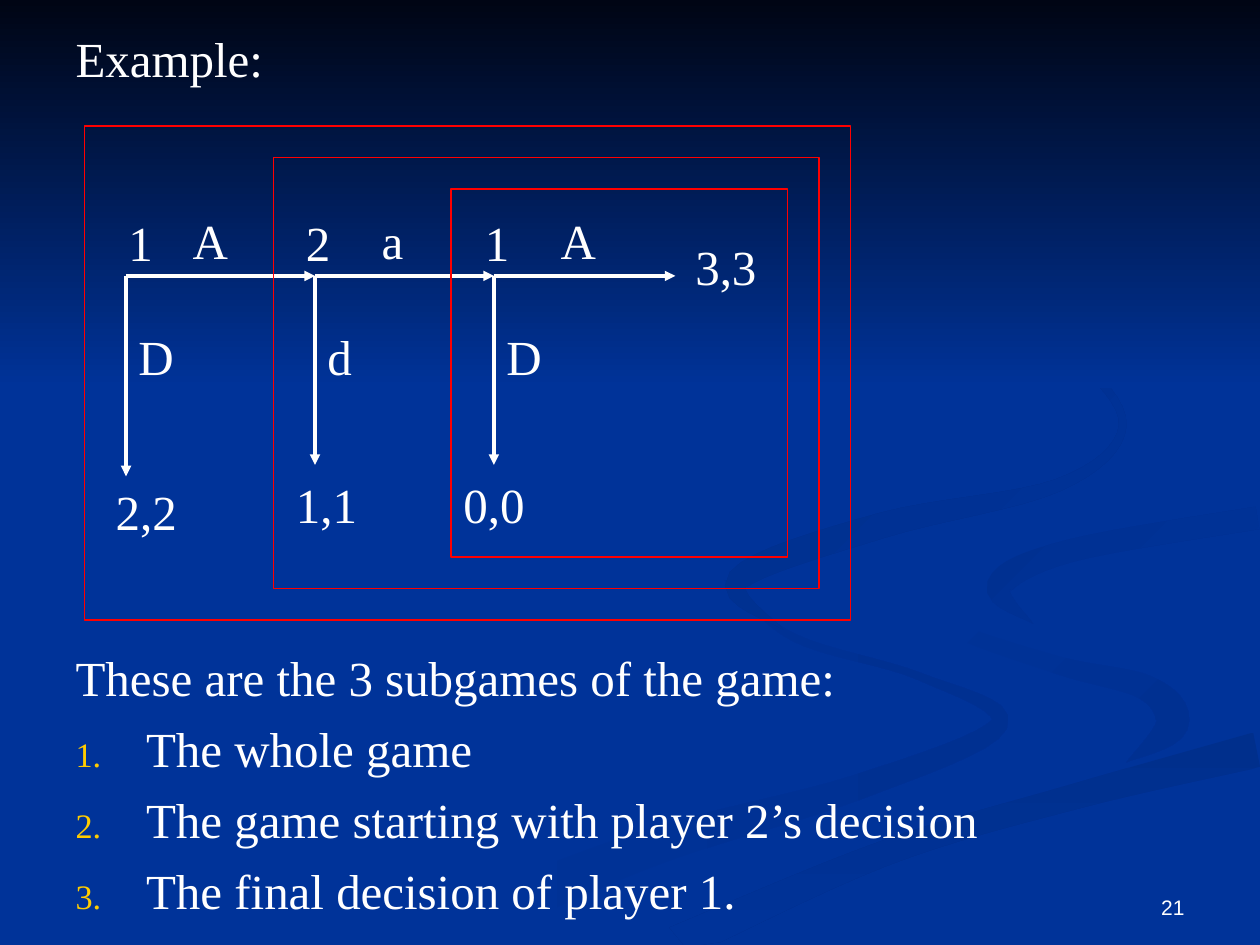
import math

from lxml import etree
from pptx import Presentation, util as u
from pptx.dml.color import RGBColor
from pptx.enum import shapes as kinds, text as t
from pptx.oxml.ns import qn

WIDTH, HEIGHT = 10, 7.5
COLOURS = {"ground": "003399", "night": "000514", "ink": "FFFFFF", "number": "FFCC00",
           "frame": "FF0000", "shade": "003091", "deep": "002F8C"}
SERIF, SANS = "Times New Roman", "Arial"

# Content
HEADING = "Example:"
INTRO = "These are the 3 subgames of the game:"
SUBGAMES = ["The whole game", "The game starting with player 2’s decision",
            "The final decision of player 1."]
PAGE = "21"
# player, label x, node x, across move, down move, down end, payoff, payoff x and y
DECISIONS = [
    ("1", 0.92, 1.0, "A", "D", 3.78, "2,2", 0.82, 3.77),
    ("2", 2.33, 2.5, "a", "d", 3.69, "1,1", 2.25, 3.72),
    ("1", 3.75, 3.92, "A", "D", 3.69, "0,0", 3.58, 3.72),
]
FINAL_X, FINAL_PAYOFF = 5.36, "3,3"
NODE_Y = 2.19
FRAME_LEFTS = [0.67, 2.17, 3.58]
FRAME_STEP = 0.25
LABEL_WIDTHS = {"a": 0.37, "A": 0.48, "D": 0.48}

# Background ribbons: start colour, end colour, angle, centre line as (x, y, half width)
RIBBONS = [
    ("ground", "shade", 0, [
        (5.75, 4.6, 0), (6.3, 5.06, 0.03), (7.3, 5.37, 0.03), (7.93, 5.75, 0.07),
        (6.8, 6.25, 0.1), (5.1, 6.75, 0.15), (3.3, 7.49, 0.2)]),
    ("ground", "shade", 45, [
        (7.24, 4.64, 0), (7.5, 4.96, 0.05), (8.4, 5.28, 0.07),
        (9.1, 5.46, 0.1), (9.3, 5.75, 0.13), (8.94, 6.05, 0)]),
    ("deep", "ground", 90, [
        (5.37, 7.49, 0.14), (7, 6.78, 0.1), (8.5, 6.33, 0.1), (9.98, 5.95, 0.14)]),
    ("shade", "ground", 45, [
        (8.2, 4.95, 0), (7.93, 4.65, 0.1), (8.5, 4.37, 0.09), (9.98, 4.11, 0.09)]),
    ("deep", "ground", 45, [
        (7.62, 2.33, 0), (8.5, 2.82, 0.03), (8.91, 3.38, 0.03), (8.4, 3.85, 0.05),
        (7, 4.17, 0.1), (5.86, 4.6, 0.09), (6.22, 5, 0)]),
]


def rgb(name):
    return RGBColor.from_string(COLOURS[name])


def style(paragraph, size=28, face=SERIF):
    paragraph.font.size, paragraph.font.name = u.Pt(size), face
    paragraph.font.bold = False
    paragraph.font.color.rgb = rgb("ink")


def place(shape, left, top, width, height):
    shape.left, shape.top = u.Inches(left), u.Inches(top)
    shape.width, shape.height = u.Inches(width), u.Inches(height)


def open_frame(shape):
    frame = shape.text_frame
    frame.margin_top = frame.margin_bottom = 0
    frame.auto_size, frame.vertical_anchor = t.MSO_AUTO_SIZE.NONE, t.MSO_ANCHOR.TOP
    return frame


def set_bullet(paragraph, hanging, numbered):
    props = paragraph._p.get_or_add_pPr()
    props.set("marL", str(u.Inches(hanging)))
    props.set("indent", str(-u.Inches(hanging)))
    if not numbered:
        etree.SubElement(props, qn("a:buNone"))
        return
    colour = etree.SubElement(props, qn("a:buClr"))
    etree.SubElement(colour, qn("a:srgbClr"), val=COLOURS["number"])
    etree.SubElement(props, qn("a:buSzPct"), val="70000")
    etree.SubElement(props, qn("a:buFont"), typeface=SERIF)
    etree.SubElement(props, qn("a:buAutoNum"), type="arabicPeriod")


def smooth(points, steps=8):
    """Catmull-Rom curve through the points."""
    padded = [points[0], *points, points[-1]]
    curve = []
    for a, b, c, d in zip(padded, padded[1:], padded[2:], padded[3:]):
        for step in range(steps):
            s = step / steps
            curve.append([q + s / 2 * (r - p + s * (2 * p - 5 * q + 4 * r - w
                          + s * (3 * (q - r) + w - p)))
                          for p, q, r, w in zip(a, b, c, d)])
    return curve + [list(points[-1])]


def ribbon_outline(centre):
    curve = smooth(centre)
    left, right = [], []
    for i, (x, y, half) in enumerate(curve):
        before, after = curve[max(i - 1, 0)], curve[min(i + 1, len(curve) - 1)]
        dx, dy = after[0] - before[0], after[1] - before[1]
        length = math.hypot(dx, dy)
        for side, edge in ((1, left), (-1, right)):
            shift = side * half / length
            edge.append((min(x - dy * shift, WIDTH), min(y + dx * shift, HEIGHT)))
    return left + right[::-1]


def fill_gradient(shape, start, end, angle):
    shape.shadow.inherit = False
    shape.line.fill.background()
    shape.fill.gradient()
    shape.fill.gradient_angle = -angle % 360
    for stop, name in zip(shape.fill.gradient_stops, (start, end)):
        stop.color.rgb = rgb(name)


def add_ribbon(slide, start, end, angle, centre):
    outline = [(u.Inches(x), u.Inches(y)) for x, y in ribbon_outline(centre)]
    builder = slide.shapes.build_freeform(*outline[0])
    builder.add_line_segments(outline[1:], close=True)
    fill_gradient(builder.convert_to_shape(), start, end, angle)


def add_box(slide, *box):
    return slide.shapes.add_shape(kinds.MSO_SHAPE.RECTANGLE, *map(u.Inches, box))


def add_label(slide, words, left, top):
    width = 0.69 if "," in words else LABEL_WIDTHS.get(words, 0.4)
    label = slide.shapes.add_textbox(*map(u.Inches, (left, top, width, 0.57)))
    label.text_frame.word_wrap = False
    label.text_frame.auto_size = t.MSO_AUTO_SIZE.SHAPE_TO_FIT_TEXT
    label.text_frame.text = words
    style(label.text_frame.paragraphs[0])


def add_arrow(slide, *ends):
    arrow = slide.shapes.add_connector(kinds.MSO_CONNECTOR.STRAIGHT, *map(u.Inches, ends))
    arrow.line.color.rgb, arrow.line.width = rgb("ink"), u.Pt(2)
    etree.SubElement(arrow.line._get_or_add_ln(), qn("a:tailEnd"), type="triangle")
    etree.SubElement(arrow._element.spPr, qn("a:effectLst"))


def main():
    deck = Presentation()
    deck.slide_width, deck.slide_height = u.Inches(WIDTH), u.Inches(HEIGHT)
    slide = deck.slides.add_slide(deck.slide_layouts[1])

    # Background
    slide.background.fill.solid()
    slide.background.fill.fore_color.rgb = rgb("ground")
    for ribbon in RIBBONS:
        add_ribbon(slide, *ribbon)
    fill_gradient(add_box(slide, 0, 0, WIDTH, 3.08), "night", "ground", 90)

    # Heading and list, in front of the background
    heading, listing = slide.shapes.title, slide.placeholders[1]
    for holder in (heading, listing):
        slide.shapes._spTree.append(holder._element)
    place(heading, 0.5, 0.23, 9, 0.55)
    frame = open_frame(heading)
    frame.text = HEADING
    frame.paragraphs[0].alignment = t.PP_ALIGN.LEFT
    style(frame.paragraphs[0])
    place(listing, 0.5, 5.14, 9, 2.2)
    frame = open_frame(listing)
    frame.text = "\n".join([INTRO] + SUBGAMES)
    for row, paragraph in enumerate(frame.paragraphs):
        set_bullet(paragraph, 0.56 if row else 0.38, numbered=row > 0)
        paragraph.space_before = u.Pt(7 if row else 0)
        style(paragraph)

    # Game tree
    next_nodes = [decision[2] for decision in DECISIONS[1:]] + [FINAL_X]
    for decision, next_x in zip(DECISIONS, next_nodes):
        player, player_x, x, across, down, end_y, payoff, payoff_x, payoff_y = decision
        add_arrow(slide, x, NODE_Y, x, end_y)
        add_arrow(slide, x, NODE_Y, next_x, NODE_Y)
        add_label(slide, player, player_x, 1.64)
        add_label(slide, across, x + 0.43, 1.62)
        add_label(slide, down, x, 2.54)
        add_label(slide, payoff, payoff_x, payoff_y)
    add_label(slide, FINAL_PAYOFF, 5.42, 1.83)

    # Nested subgame frames
    for depth, left in enumerate(FRAME_LEFTS):
        inset = depth * FRAME_STEP
        subgame = add_box(slide, left, 1 + inset, 6.75 - inset - left, 3.92 - 2 * inset)
        subgame.shadow.inherit = False
        subgame.fill.background()
        subgame.line.color.rgb, subgame.line.width = rgb("frame"), u.Pt(0.75)

    # Page number
    page = slide.shapes.add_textbox(*map(u.Inches, (7.17, 6.83, 2.33, 0.52)))
    page.text_frame.word_wrap = True
    page.text_frame.vertical_anchor = t.MSO_ANCHOR.BOTTOM
    page.text_frame.text = PAGE
    page.text_frame.paragraphs[0].alignment = t.PP_ALIGN.RIGHT
    style(page.text_frame.paragraphs[0], 12, SANS)

    deck.save("out.pptx")


if __name__ == "__main__":
    main()
